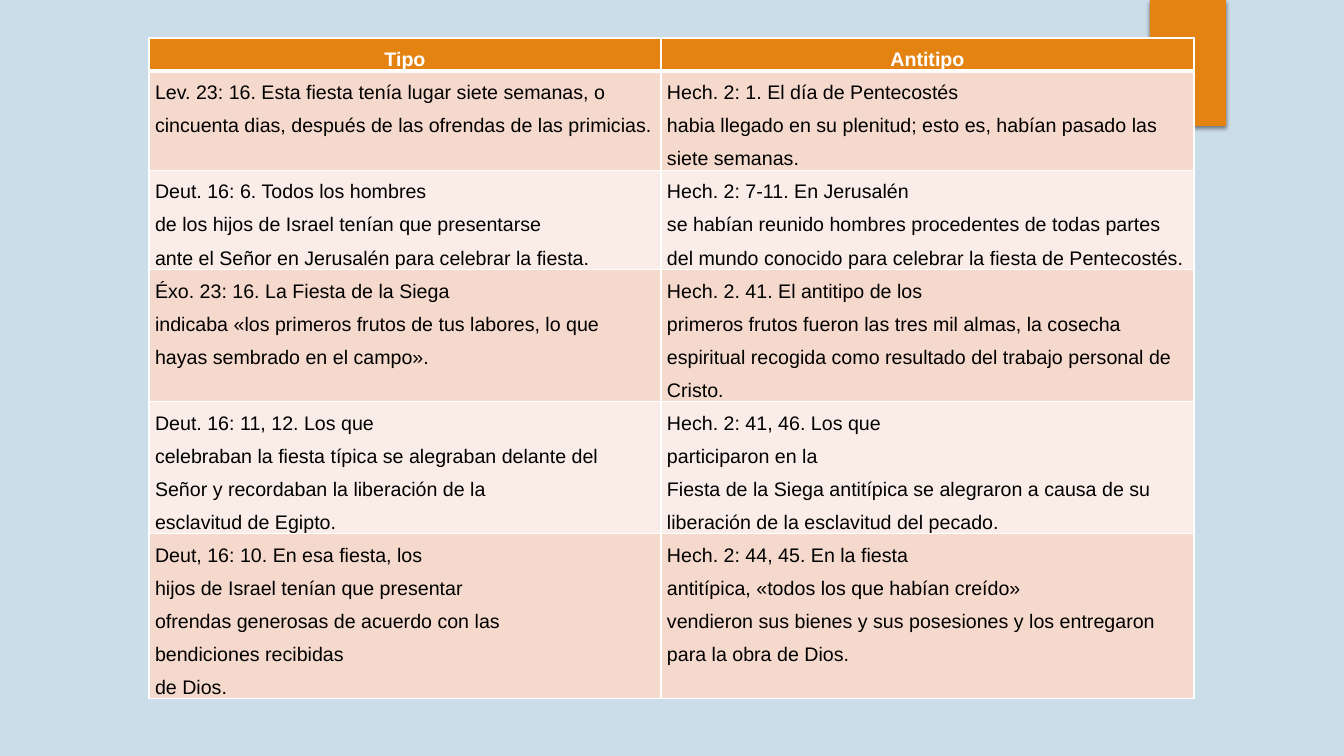
from dataclasses import dataclass

from lxml.etree import SubElement
from pptx import Presentation
from pptx.dml.color import RGBColor
from pptx.enum.shapes import MSO_SHAPE
from pptx.enum.text import PP_ALIGN
from pptx.oxml.ns import qn
from pptx.util import Emu, Pt

EMU_PER_PIXEL = 914400 / 100.8


@dataclass(frozen=True)
class Theme:
    background: str = "CCDDEA"
    accent: str = "E48312"
    band_dark: str = "F5D9CC"
    band_light: str = "FAEDE7"
    text: str = "000000"
    white: str = "FFFFFF"
    font: str = "Arial"
    size: int = 14
    border: int = 1
    header_border: int = 3


THEME = Theme()
LINE_HEIGHT = 33
COLUMN_WIDTHS = (512, 533)
HEADERS = ("Tipo", "Antitipo")
ROWS = [
    (3,
     ["Lev. 23: 16. Esta fiesta tenía lugar siete semanas, o cincuenta dias, "
      "después de las ofrendas de las primicias."],
     ["Hech. 2: 1. El día de Pentecostés",
      "habia llegado en su plenitud; esto es, habían pasado las siete semanas."]),
    (3,
     ["Deut. 16: 6. Todos los hombres",
      "de los hijos de Israel tenían que presentarse",
      "ante el Señor en Jerusalén para celebrar la fiesta."],
     ["Hech. 2: 7-11. En Jerusalén",
      "se habían reunido hombres procedentes de todas partes del mundo conocido "
      "para celebrar la fiesta de Pentecostés."]),
    (4,
     ["Éxo. 23: 16. La Fiesta de la Siega",
      "indicaba «los primeros frutos de tus labores, lo que hayas sembrado en el campo»."],
     ["Hech. 2. 41. El antitipo de los",
      "primeros frutos fueron las tres mil almas, la cosecha espiritual recogida "
      "como resultado del trabajo personal de Cristo."]),
    (4,
     ["Deut. 16: 11, 12. Los que",
      "celebraban la fiesta típica se alegraban delante del Señor y recordaban "
      "la liberación de la",
      "esclavitud de Egipto."],
     ["Hech. 2: 41, 46. Los que",
      "participaron en la",
      "Fiesta de la Siega antitípica se alegraron a causa de su liberación "
      "de la esclavitud del pecado."]),
    (5,
     ["Deut, 16: 10. En esa fiesta, los",
      "hijos de Israel tenían que presentar",
      "ofrendas generosas de acuerdo con las",
      "bendiciones recibidas",
      "de Dios."],
     ["Hech. 2: 44, 45. En la fiesta",
      "antitípica, «todos los que habían creído»",
      "vendieron sus bienes y sus posesiones y los entregaron para la obra de Dios."]),
]


def px(value):
    return Emu(round(value * EMU_PER_PIXEL))


def add_rectangle(slide, left, top, width, height, color):
    shape = slide.shapes.add_shape(
        MSO_SHAPE.RECTANGLE, px(left), px(top), px(width), px(height))
    shape.shadow.inherit = False
    shape.fill.solid()
    shape.fill.fore_color.rgb = RGBColor.from_string(color)
    shape.line.fill.background()
    return shape


def add_shadow(shape):
    effects = shape.element.spPr.find(qn("a:effectLst"))
    shadow = SubElement(effects, qn("a:outerShdw"), blurRad=str(Pt(3)),
                        dist=str(Pt(2)), dir="5400000", rotWithShape="0")
    color = SubElement(shadow, qn("a:srgbClr"), val=THEME.text)
    SubElement(color, qn("a:alpha"), val="45000")


def set_borders(cell, bottom_width):
    properties = cell.fill._xPr
    widths = {"a:lnL": THEME.border, "a:lnR": THEME.border,
              "a:lnT": THEME.border, "a:lnB": bottom_width}
    for tag, width in widths.items():
        line = SubElement(properties, qn(tag), w=str(Pt(width)))
        fill = SubElement(line, qn("a:solidFill"))
        SubElement(fill, qn("a:srgbClr"), val=THEME.white)


def fill_cell(cell, lines, color, is_header):
    set_borders(cell, THEME.header_border if is_header else THEME.border)
    cell.fill.solid()
    cell.fill.fore_color.rgb = RGBColor.from_string(color)
    cell.margin_left = cell.margin_right = px(6)
    cell.margin_top = cell.margin_bottom = 0
    cell.text_frame.text = "\n".join(lines)
    for paragraph in cell.text_frame.paragraphs:
        paragraph.alignment = PP_ALIGN.CENTER if is_header else PP_ALIGN.LEFT
        paragraph.line_spacing = 1.5
        paragraph.font.name = THEME.font
        paragraph.font.size = Pt(THEME.size)
        paragraph.font.bold = is_header
        paragraph.font.color.rgb = RGBColor.from_string(
            THEME.white if is_header else THEME.text)


def add_comparison_table(slide, left, top):
    rows = [(1, *([header] for header in HEADERS)), *ROWS]
    height = LINE_HEIGHT * sum(row[0] for row in rows)
    table = slide.shapes.add_table(
        len(rows), len(COLUMN_WIDTHS), px(left), px(top),
        px(sum(COLUMN_WIDTHS)), px(height)).table
    for column, width in zip(table.columns, COLUMN_WIDTHS):
        column.width = px(width)
    for row_index, (line_count, *texts) in enumerate(rows):
        table.rows[row_index].height = px(LINE_HEIGHT * line_count)
        is_header = row_index == 0
        band = THEME.band_dark if row_index % 2 else THEME.band_light
        color = THEME.accent if is_header else band
        for column_index, lines in enumerate(texts):
            fill_cell(table.cell(row_index, column_index), lines, color, is_header)


def main():
    presentation = Presentation()
    presentation.slide_width = px(1344)
    presentation.slide_height = px(756)
    slide = presentation.slides.add_slide(presentation.slide_layouts[6])
    add_rectangle(slide, 0, 0, 1344, 756, THEME.background)
    add_shadow(add_rectangle(slide, 1150, 0, 76, 126, THEME.accent))
    add_comparison_table(slide, 149, 38)
    presentation.save("out.pptx")


if __name__ == "__main__":
    main()
